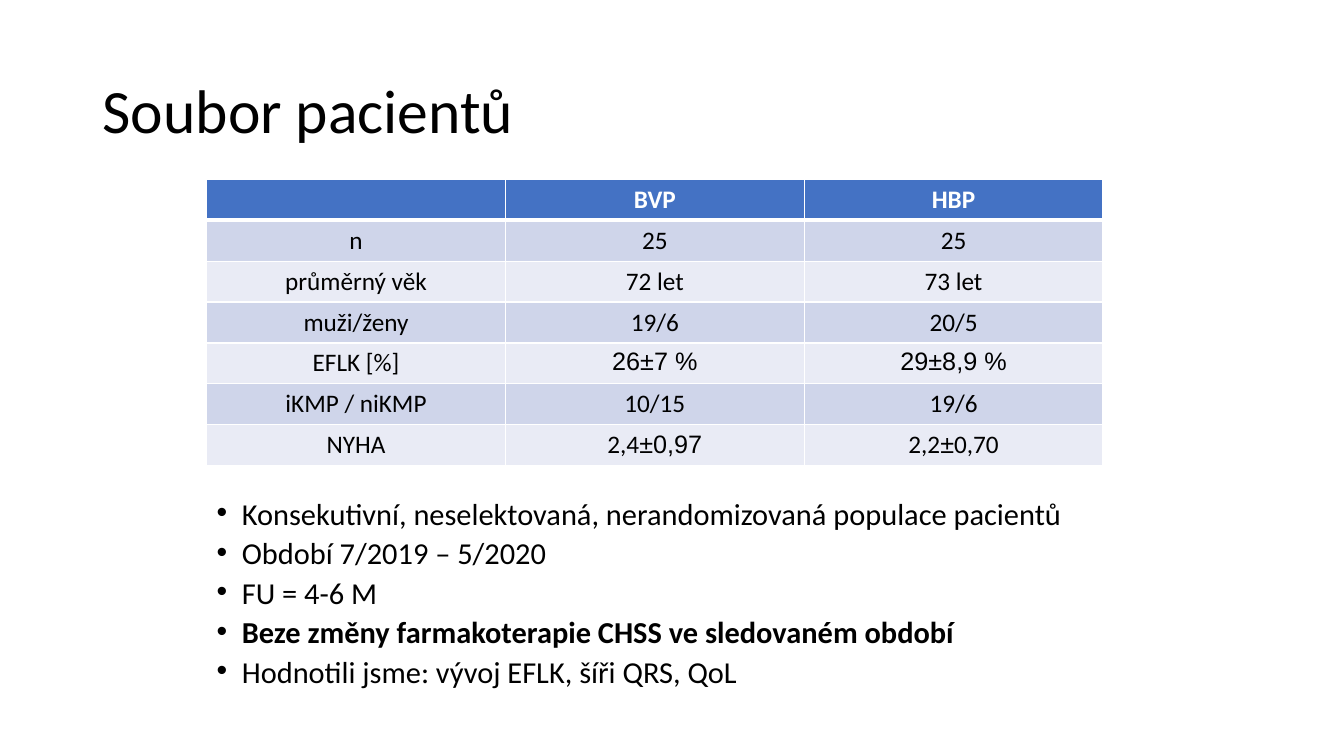
from lxml import etree
from pptx import Presentation
from pptx.dml.color import RGBColor
from pptx.enum.text import MSO_ANCHOR as Anchor, PP_ALIGN as Align
from pptx.oxml.ns import qn
from pptx.util import Inches, Pt

BODY_FONT, SYMBOL_FONT = "Calibri", "Arial"
BLACK, WHITE = "000000", "FFFFFF"
HEADER_FILL, ROW_FILLS = "4472C4", ("CFD5EA", "E9EBF5")


def arial(text):
    return text, SYMBOL_FONT


# A cell is a list of runs; a run is plain text or a (text, font) pair
PATIENT_ROWS = [
    [[], ["BVP"], ["HBP"]],
    [["n"], ["25"], ["25"]],
    [["průměrný věk"], ["72 let"], ["73 let"]],
    [["muži/ženy"], ["19/6"], ["20/5"]],
    [["EFLK [%]"], [arial("26±7 %")], [arial("29±8,9 %")]],
    [["iKMP / niKMP"], ["10/15"], ["19/6"]],
    [["NYHA"], ["2,4", arial("±0,97")], ["2,2", arial("±"), "0,70"]],
]

# Text and bold flag of each point
STUDY_POINTS = [
    ("Konsekutivní, neselektovaná, nerandomizovaná populace pacientů", False),
    ("Období 7/2019 – 5/2020", False),
    ("FU = 4-6 M", False),
    ("Beze změny farmakoterapie CHSS ve sledovaném období", True),
    ("Hodnotili jsme: vývoj EFLK, šíři QRS, QoL", False),
]


def rgb(hex_colour):
    return RGBColor.from_string(hex_colour)


def add_text(paragraph, text, size=18, font=BODY_FONT, colour=BLACK, bold=False):
    run = paragraph.add_run()
    run.text = text
    run.font.size = Pt(size)
    run.font.name = font
    run.font.bold = bold
    run.font.color.rgb = rgb(colour)


def add_frame(slide, left, top, width, height, anchor=Anchor.TOP):
    frame = slide.shapes.add_textbox(
        Inches(left), Inches(top), Inches(width), Inches(height)).text_frame
    frame.word_wrap = True
    frame.vertical_anchor = anchor
    return frame


def add_bullet(paragraph, indent=0.25):
    props = paragraph._p.get_or_add_pPr()
    props.set("marL", str(Inches(indent)))
    props.set("indent", str(-Inches(indent)))
    etree.SubElement(props, qn("a:buFont"), typeface=SYMBOL_FONT)
    etree.SubElement(props, qn("a:buChar"), char="•")


def set_borders(cell, bottom_width):
    props = cell._tc.get_or_add_tcPr()
    widths = {"L": 1, "R": 1, "T": 1, "B": bottom_width}
    for position, (side, width) in enumerate(widths.items()):
        line = etree.Element(qn(f"a:ln{side}"), w=str(Pt(width)))
        fill = etree.SubElement(line, qn("a:solidFill"))
        etree.SubElement(fill, qn("a:srgbClr"), val=WHITE)
        props.insert(position, line)


def add_title(slide, text):
    frame = add_frame(slide, 0.92, 0.4, 11.5, 1.45, Anchor.MIDDLE)
    heading = frame.paragraphs[0]
    heading.line_spacing = 0.9
    add_text(heading, text, size=44)


def add_patient_table(slide, rows):
    table = slide.shapes.add_table(
        len(rows), len(rows[0]), Inches(2.05), Inches(1.78),
        Inches(8.89), Inches(2.84)).table
    for r, row in enumerate(rows):
        header = r == 0
        for c, runs in enumerate(row):
            cell = table.cell(r, c)
            cell.fill.solid()
            cell.fill.fore_color.rgb = rgb(HEADER_FILL if header else ROW_FILLS[(r - 1) % 2])
            set_borders(cell, bottom_width=3 if header else 1)
            paragraph = cell.text_frame.paragraphs[0]
            paragraph.alignment = Align.CENTER
            for run in runs:
                text, font = (run, BODY_FONT) if isinstance(run, str) else run
                add_text(paragraph, text, font=font, bold=header,
                         colour=WHITE if header else BLACK)


def add_study_points(slide, points):
    frame = add_frame(slide, 2.05, 4.96, 11.28, 2.02)
    for i, (text, bold) in enumerate(points):
        point = frame.add_paragraph() if i else frame.paragraphs[0]
        point.line_spacing = 0.7
        point.space_before = Pt(10)
        add_bullet(point)
        add_text(point, text, size=21.7, bold=bold)


def main():
    deck = Presentation()
    deck.slide_width, deck.slide_height = Inches(13.33), Inches(7.5)
    slide = deck.slides.add_slide(deck.slide_layouts[6])
    add_title(slide, "Soubor pacientů")
    add_patient_table(slide, PATIENT_ROWS)
    add_study_points(slide, STUDY_POINTS)
    deck.save("out.pptx")


if __name__ == "__main__":
    main()
